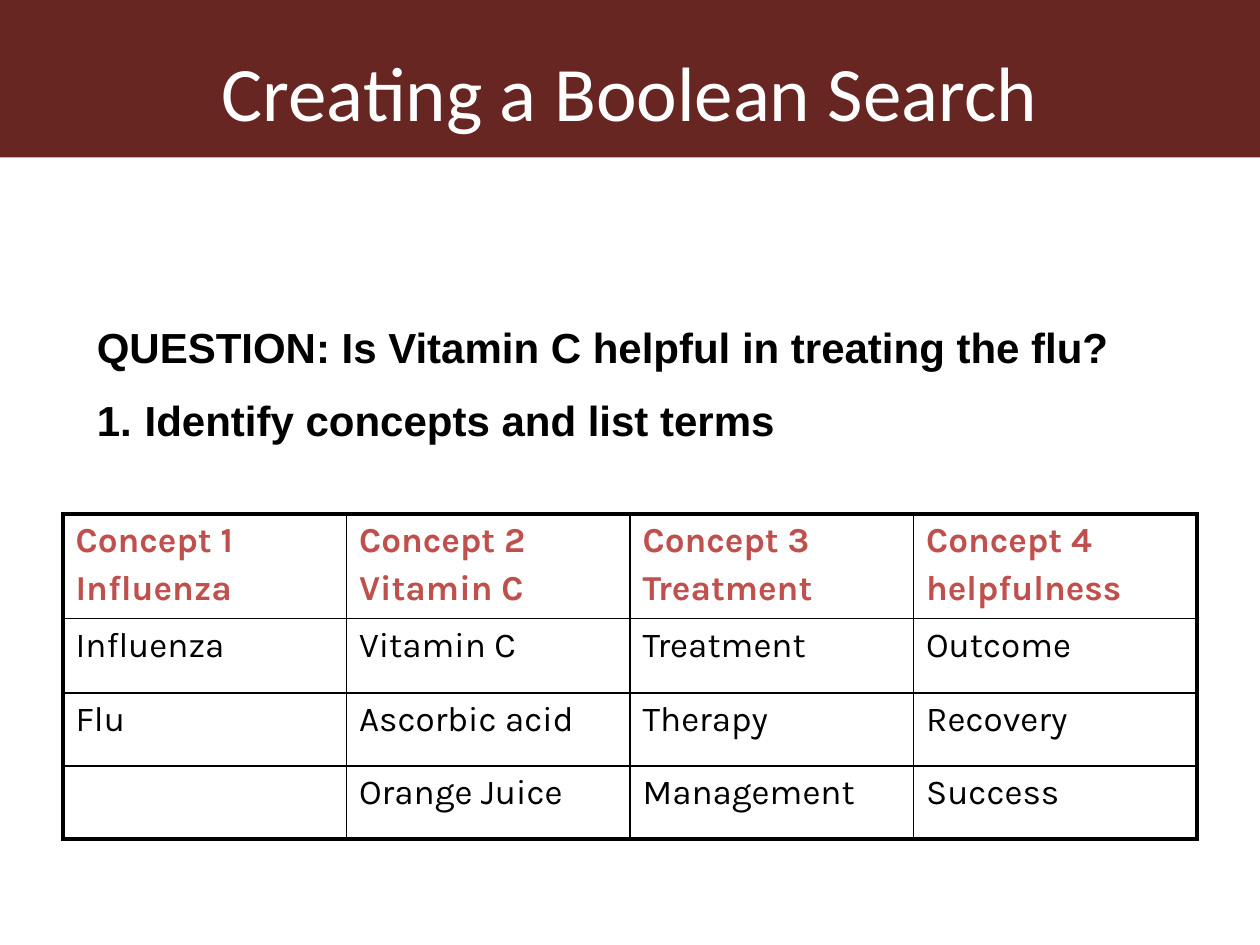
from lxml import etree
from pptx import Presentation
from pptx import util as u
from pptx.dml.color import RGBColor
from pptx.enum import shapes, text
from pptx.oxml.ns import qn

Inches, Pt = u.Inches, u.Pt
MAROON, RED, BLACK, WHITE = "682622", "C0504D", "000000", "FFFFFF"

CONCEPTS = [
    (["Concept 1", "Influenza"], ["Influenza", "Flu", ""]),
    (["Concept 2", "Vitamin C"], ["Vitamin C", "Ascorbic acid", "Orange Juice"]),
    (["Concept 3", "Treatment"], ["Treatment", "Therapy", "Management"]),
    (["Concept 4", "helpfulness"], ["Outcome", "Recovery", "Success"]),
]
ROW_HEIGHTS = [0.83, 0.59, 0.58, 0.58]


def rgb(value):
    return RGBColor.from_string(value)


def add_run(paragraph, words, font, size, color, bold=False):
    run = paragraph.add_run()
    run.text = words
    run.font.name = font
    run.font.size = Pt(size)
    run.font.bold = bold
    run.font.color.rgb = rgb(color)


def add_header(slide, left, top, width, height):
    """Maroon band with the slide title over it."""
    band = slide.shapes.add_shape(shapes.MSO_SHAPE.RECTANGLE, Inches(left),
                                  Inches(top), Inches(width), Inches(height))
    band.shadow.inherit = False
    band.fill.solid()
    band.fill.fore_color.rgb = rgb(MAROON)
    band.line.fill.background()

    title = slide.shapes.title
    title.left, title.top = Inches(left + 0.5), Inches(top + 0.3)
    title.width, title.height = Inches(width - 1), Inches(height)
    # The band is added after the placeholder, so lift the title above it
    band._element.addnext(title._element)
    frame = title.text_frame
    frame.vertical_anchor = text.MSO_ANCHOR.TOP
    heading = frame.paragraphs[0]
    heading.alignment = text.PP_ALIGN.CENTER
    add_run(heading, "Creating a Boolean Search", "Calibri", 44, WHITE)


def add_question(slide, left, top, width, height):
    box = slide.shapes.add_textbox(Inches(left), Inches(top),
                                   Inches(width), Inches(height))
    frame = box.text_frame
    frame.word_wrap = True
    question, step = frame.paragraphs[0], frame.add_paragraph()
    lines = [(question, "QUESTION: Is Vitamin C helpful in treating the flu?"),
             (step, "Identify concepts and list terms")]
    for paragraph, words in lines:
        paragraph.space_before = Pt(13)
        add_run(paragraph, words, "Arial", 24, BLACK, bold=True)
        properties = paragraph._p.get_or_add_pPr()
        properties.set("marL", str(Inches(0.38)))
        properties.set("indent", str(Inches(-0.38)))
    numbering = etree.SubElement(step._p.get_or_add_pPr(), qn("a:buAutoNum"))
    numbering.set("type", "arabicPeriod")


def set_borders(cell, widths):
    """Draw black borders; widths are in points for left, right, top, bottom."""
    properties = cell._tc.get_or_add_tcPr()
    for index, (side, width) in enumerate(zip("LRTB", widths)):
        line = etree.Element(qn("a:ln" + side), w=str(Pt(width)))
        fill = etree.SubElement(line, qn("a:solidFill"))
        etree.SubElement(fill, qn("a:srgbClr"), val=BLACK)
        properties.insert(index, line)


def fill_cell(cell, lines, color, bold):
    cell.fill.background()
    frame = cell.text_frame
    for index, words in enumerate(lines):
        paragraph = frame.add_paragraph() if index else frame.paragraphs[0]
        paragraph.space_before = Pt(4)
        if words:
            add_run(paragraph, words, "Karla", 20, color, bold)


def add_concepts(slide, left, top, width):
    rows, columns = len(ROW_HEIGHTS), len(CONCEPTS)
    table = slide.shapes.add_table(rows, columns, Inches(left), Inches(top),
                                   Inches(width), Inches(sum(ROW_HEIGHTS))).table
    table.first_row = table.horz_banding = False
    for row, height in zip(table.rows, ROW_HEIGHTS):
        row.height = Inches(height)

    for c, (heading, terms) in enumerate(CONCEPTS):
        table.columns[c].width = Inches(width / columns)
        fill_cell(table.cell(0, c), heading, RED, True)
        for r, term in enumerate(terms, start=1):
            fill_cell(table.cell(r, c), [term], BLACK, False)
        for r in range(rows):
            outer = [c == 0, c == columns - 1, r == 0, r == rows - 1]
            set_borders(table.cell(r, c), [2.25 if edge else 1 for edge in outer])


def main():
    deck = Presentation()
    deck.slide_width, deck.slide_height = Inches(10), Inches(7.5)
    slide = deck.slides.add_slide(deck.slide_layouts.get_by_name("Title Only"))
    add_header(slide, 0, 0, 10, 1.25)
    add_concepts(slide, 0.5, 4.08, 9)
    add_question(slide, 0.67, 2.5, 8.42, 1.1)
    deck.save("out.pptx")


if __name__ == "__main__":
    main()
